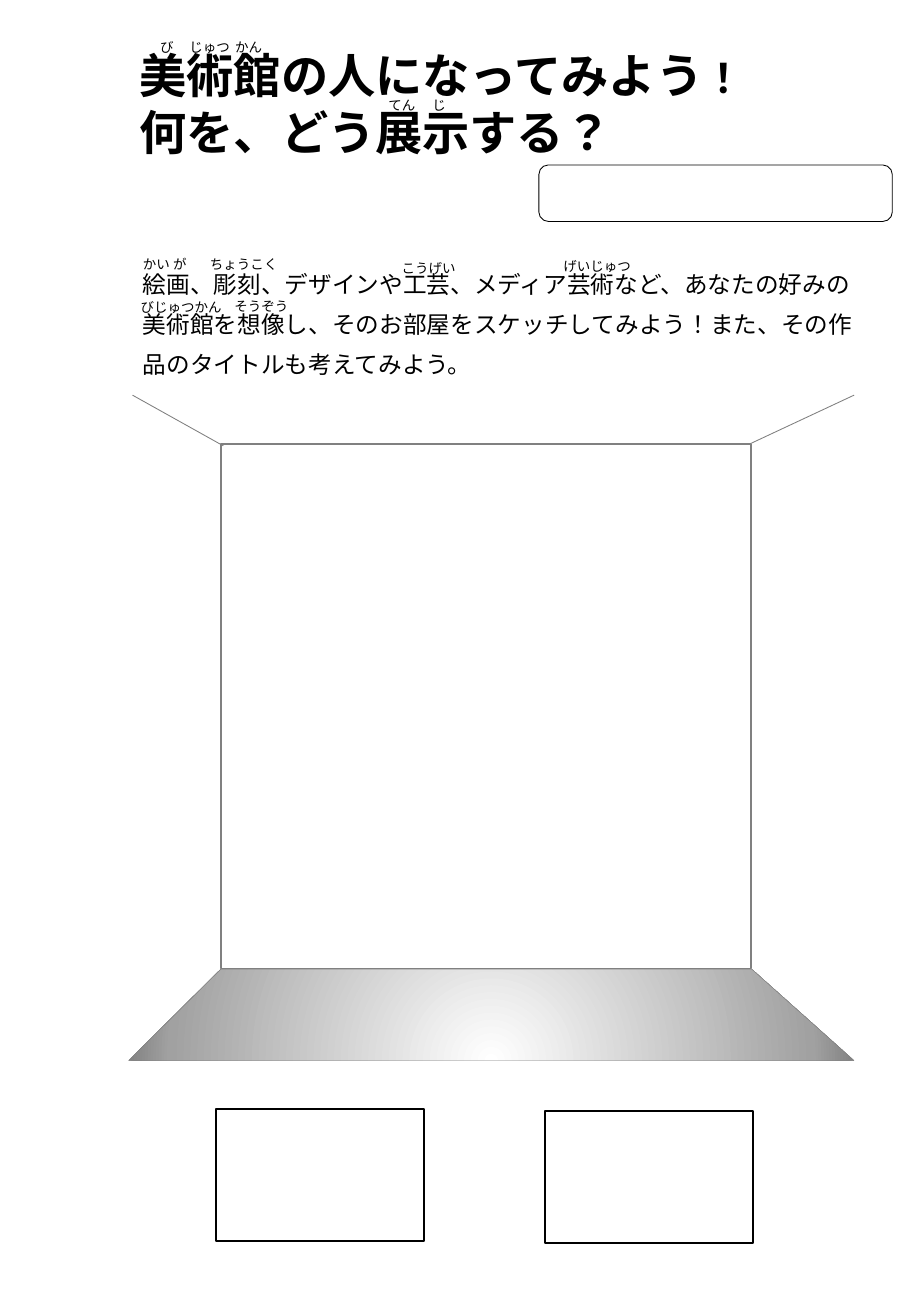
from lxml import etree
from pptx import Presentation
from pptx.dml.color import RGBColor
from pptx.enum.lang import MSO_LANGUAGE_ID
from pptx.enum.shapes import MSO_CONNECTOR, MSO_SHAPE
from pptx.oxml import parse_xml
from pptx.oxml.ns import nsdecls, qn
from pptx.util import Cm, Pt

RECT = MSO_SHAPE.RECTANGLE
ROUND_RECT = MSO_SHAPE.ROUNDED_RECTANGLE
STRAIGHT = MSO_CONNECTOR.STRAIGHT
JAPANESE = MSO_LANGUAGE_ID.JAPANESE

FONT = "Noto Sans CJK JP"
BLACK, GREY, WHITE = "000000", "808080", "FFFFFF"

TITLE = [
    [("美術館の人になってみよう", 28), ("！", 24)],
    [("何を、どう展示する？", 28)],
]
BODY = [
    [("絵画、彫刻、デザインや工芸、メディア芸術など、あなたの好みの", 14)],
    [("美術館を想像し、そのお部屋をスケッチしてみよう！また、その作", 14)],
    [("品のタイトルも考えてみよう。", 14)],
]
# Reading, left, top
FURIGANA = [
    ("び", 3.1, 0.69), ("じゅつ", 3.71, 0.69), ("かん", 4.67, 0.69),
    ("てん", 7.87, 1.9), ("じ", 8.79, 1.9),
    ("かい が", 2.74, 5.23), ("ちょうこく", 4.14, 5.23),
    ("こうげい", 8.15, 5.31), ("げいじゅつ", 11.53, 5.26),
    ("びじゅつかん", 2.69, 6.12), ("そうぞう", 4.65, 6.1),
]
FLOOR = [(2.69, 22.17), (4.62, 20.26), (15.72, 20.26), (17.86, 22.17)]
FLOOR_STOPS = [(0, WHITE), (88, "A1A1A1"), (100, GREY)]


def rgb(value):
    return RGBColor.from_string(value)


def set_line(shape, color, width):
    shape.line.color.rgb = rgb(color)
    shape.line.width = Pt(width)


def add_box(s, kind, left, top, width, height, color, weight, fill=None):
    sp = s.shapes.add_shape(kind, Cm(left), Cm(top), Cm(width), Cm(height))
    sp.shadow.inherit = False
    if fill:
        sp.fill.solid()
        sp.fill.fore_color.rgb = rgb(fill)
    else:
        sp.fill.background()
    set_line(sp, color, weight)


def add_line(s, x1, y1, x2, y2):
    line = s.shapes.add_connector(STRAIGHT, Cm(x1), Cm(y1), Cm(x2), Cm(y2))
    set_line(line, GREY, 0.5)
    etree.SubElement(line._element.spPr, qn("a:effectLst"))


def add_floor(s):
    points = [(Cm(x), Cm(y)) for x, y in FLOOR]
    builder = s.shapes.build_freeform(*points[0], scale=1.0)
    builder.add_line_segments(points[1:], close=True)
    sp = builder.convert_to_shape()
    sp.shadow.inherit = False
    set_line(sp, GREY, 0.25)
    # Radial gradient centred just below the floor
    stops = "".join(
        f'<a:gs pos="{pos * 1000}"><a:srgbClr val="{color}"/></a:gs>'
        for pos, color in FLOOR_STOPS)
    gradient = parse_xml(
        f'<a:gradFill {nsdecls("a")} rotWithShape="1"><a:gsLst>{stops}</a:gsLst>'
        '<a:path path="circle"><a:fillToRect l="50000" t="130000" r="50000" '
        'b="-30000"/></a:path></a:gradFill>')
    sp._element.spPr.find(qn("a:custGeom")).addnext(gradient)


def add_text(s, left, top, width, height, paragraphs, bold=False, gap=0):
    tf = s.shapes.add_textbox(Cm(left), Cm(top), Cm(width), Cm(height)).text_frame
    tf.word_wrap = True
    for i, runs in enumerate(paragraphs):
        p = tf.add_paragraph() if i else tf.paragraphs[0]
        if i and gap:
            p.space_before = Pt(gap)
        for text, size in runs:
            r = p.add_run()
            r.text = text
            r.font.size = Pt(size)
            r.font.bold = bold
            r.font.color.rgb = rgb(BLACK)
            r.font.language_id = JAPANESE
            r.font.name = FONT
            etree.SubElement(r._r.get_or_add_rPr(), qn("a:ea"), typeface=FONT)


def main():
    prs = Presentation()
    prs.slide_width, prs.slide_height = Cm(19.05), Cm(27.51)
    s = prs.slides.add_slide(prs.slide_layouts[6])

    # Gallery room: back wall, ceiling edges and floor
    add_box(s, RECT, 4.62, 9.28, 11.09, 10.97, GREY, 1, WHITE)
    add_line(s, 4.67, 9.32, 2.77, 8.26)
    add_line(s, 15.7, 9.27, 17.86, 8.26)
    add_floor(s)

    # Boxes for the titles of the works
    for left, top in [(11.4, 23.22), (4.52, 23.18)]:
        add_box(s, RECT, left, top, 4.35, 2.77, BLACK, 1, WHITE)

    # Heading and name field
    add_text(s, 2.67, 0.85, 16.13, 2.64, TITLE, bold=True)
    add_box(s, ROUND_RECT, 11.27, 3.45, 7.39, 1.18, BLACK, 0.5)

    # Instructions
    add_text(s, 2.74, 5.52, 15.8, 2.57, BODY, gap=7)

    # Readings above the kanji
    for reading, left, top in FURIGANA:
        width = 0.7 + 0.29 * len(reading)
        add_text(s, left, top, width, 0.61, [[(reading, 8)]])

    prs.save("out.pptx")


if __name__ == "__main__":
    main()
